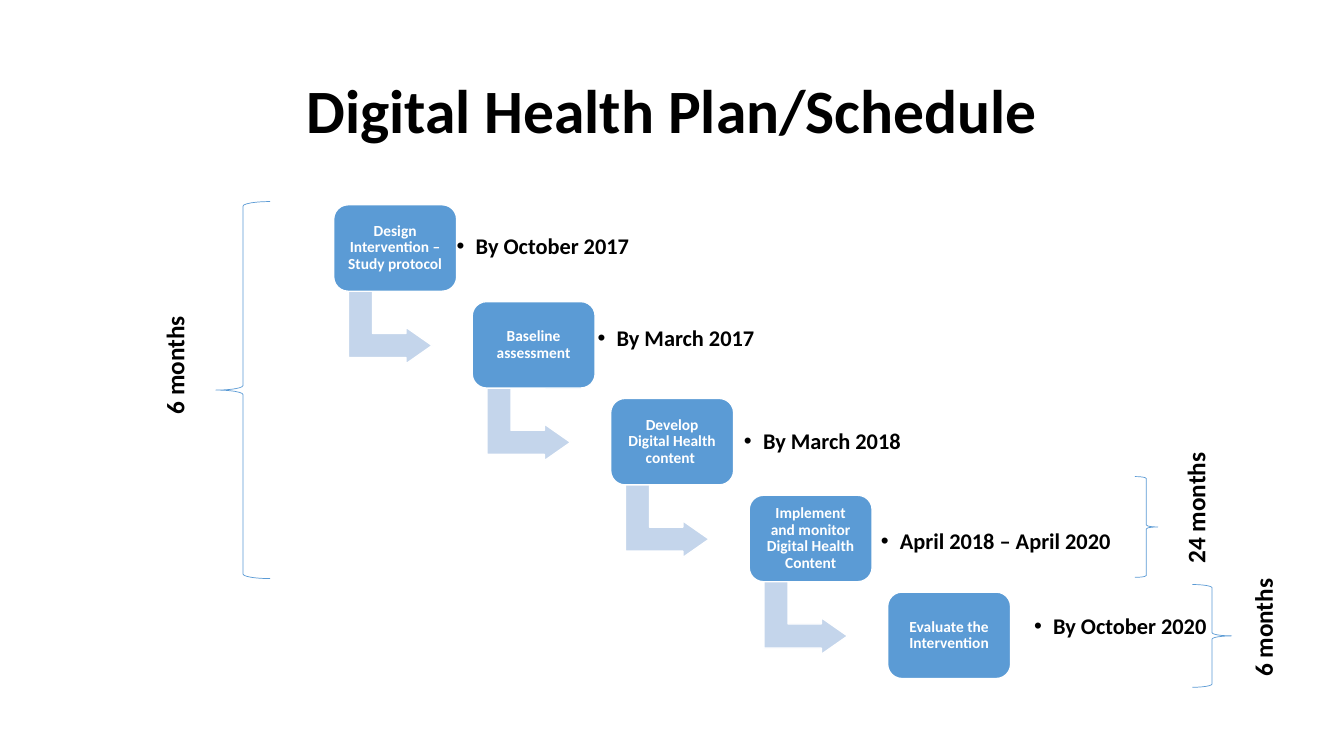
"""Build the Digital Health Plan/Schedule slide."""
from lxml import etree
from pptx import Presentation
from pptx import util as u
from pptx.dml.color import RGBColor
from pptx.enum import shapes, text
from pptx.oxml.ns import qn

COLOURS = {"box": "5B9BD5", "arrow": "C4D5EB", "white": "FFFFFF", "black": "000000"}
FONT = "Calibri"
TITLE = "Digital Health Plan/Schedule"
STEPS = [
    "Design Intervention – Study protocol",
    "Baseline assessment",
    "Develop Digital Health content ",
    "Implement and monitor Digital Health Content",
    "Evaluate the Intervention",
]
DATES = [
    ("By October 2017", 11.33, 5.36, 6.05),
    ("By March 2017", 14.88, 7.67, 6.05),
    ("By March 2018", 18.57, 10.26, 6.05),
    ("April 2018 – April 2020", 22.02, 12.8, 7.16),
    ("By October 2020", 25.88, 14.94, 6.05),
]
LEFT_BRACE, RIGHT_BRACE = shapes.MSO_SHAPE.LEFT_BRACE, shapes.MSO_SHAPE.RIGHT_BRACE
BRACES = [
    (LEFT_BRACE, 5.44, 5.08, 1.37, 9.5),
    (RIGHT_BRACE, 28.6, 12.01, 0.58, 2.54),
    (RIGHT_BRACE, 30.05, 14.73, 0.99, 2.59),
]
DURATIONS = [("6 months", 3.89, 6.38), ("24 months", 29.62, 9.98), ("6 months", 31.32, 13)]
FIRST_LEFT, FIRST_TOP = 8.41, 5.16
STEP_RIGHT, STEP_DOWN = 3.49, 2.44
BOX_WIDTH, BOX_HEIGHT = 3.1, 2.18


def colour(name):
    return RGBColor.from_string(COLOURS[name])


def write(shape, words, size, ink="black", align=None, inset=None, spacing=None):
    frame = shape.text_frame
    frame.text = words
    frame.word_wrap = True
    frame.vertical_anchor = text.MSO_ANCHOR.MIDDLE
    if inset is not None:
        frame.margin_left = frame.margin_right = u.Cm(inset)
        frame.margin_top = frame.margin_bottom = u.Cm(inset)
    paragraph = frame.paragraphs[0]
    paragraph.alignment = align
    paragraph.line_spacing = spacing
    font = paragraph.runs[0].font
    font.name, font.size, font.bold = FONT, u.Pt(size), True
    font.color.rgb = colour(ink)
    return paragraph


def add_shape(slide, kind, place, fill, line, width):
    shape = slide.shapes.add_shape(kind, *map(u.Cm, place))
    shape.shadow.inherit = False
    if fill:
        shape.fill.solid()
        shape.fill.fore_color.rgb = colour(fill)
    else:
        shape.fill.background()
    shape.line.color.rgb = colour(line)
    shape.line.width = u.Pt(width)
    return shape


def add_step(slide, index, words):
    left, top = FIRST_LEFT + index * STEP_RIGHT, FIRST_TOP + index * STEP_DOWN
    if index < len(STEPS) - 1:
        arrow = add_shape(slide, shapes.MSO_SHAPE.BENT_UP_ARROW,
                          (left + 0.5, top + 2.03, 1.85, 2.11), "arrow", "white", 1)
        arrow.rotation = 90
        for number, value in enumerate((0.328, 0.25, 0.358)):
            arrow.adjustments[number] = value
    box = add_shape(slide, shapes.MSO_SHAPE.ROUNDED_RECTANGLE,
                    (left, top, BOX_WIDTH, BOX_HEIGHT), "box", "white", 1)
    write(box, words, 11, "white", text.PP_ALIGN.CENTER, 0.23, 0.9)


def add_date(slide, words, left, top, width):
    box = slide.shapes.add_textbox(*map(u.Cm, (left, top, width, 1.75)))
    paragraph = write(box, words, 16, align=text.PP_ALIGN.LEFT, inset=0.18, spacing=0.9)
    properties = paragraph._p.get_or_add_pPr()
    properties.set("marL", str(u.Cm(0.48)))
    properties.set("indent", str(-u.Cm(0.48)))
    etree.SubElement(properties, qn("a:buFont")).set("typeface", "Arial")
    etree.SubElement(properties, qn("a:buChar")).set("char", "•")


def add_duration(slide, words, left, top):
    box = slide.shapes.add_textbox(*map(u.Cm, (left, top, 1.27, 5.64)))
    write(box, words, 18, align=text.PP_ALIGN.CENTER)
    box.text_frame.vertical_anchor = text.MSO_ANCHOR.TOP
    box.text_frame._txBody.bodyPr.set("vert", "vert270")


def main():
    presentation = Presentation()
    presentation.slide_width, presentation.slide_height = u.Cm(33.87), u.Cm(19.05)
    slide = presentation.slides.add_slide(presentation.slide_layouts[5])
    title = slide.shapes.title
    title.left, title.top, title.width, title.height = map(u.Cm, (2.34, 1.02, 29.21, 3.68))
    write(title, TITLE, 44, align=text.PP_ALIGN.CENTER, spacing=0.9)
    for index, words in enumerate(STEPS):
        add_step(slide, index, words)
    for date in DATES:
        add_date(slide, *date)
    for kind, *place in BRACES:
        add_shape(slide, kind, place, None, "box", 0.5)
    for duration in DURATIONS:
        add_duration(slide, *duration)
    presentation.save("out.pptx")


if __name__ == "__main__":
    main()
